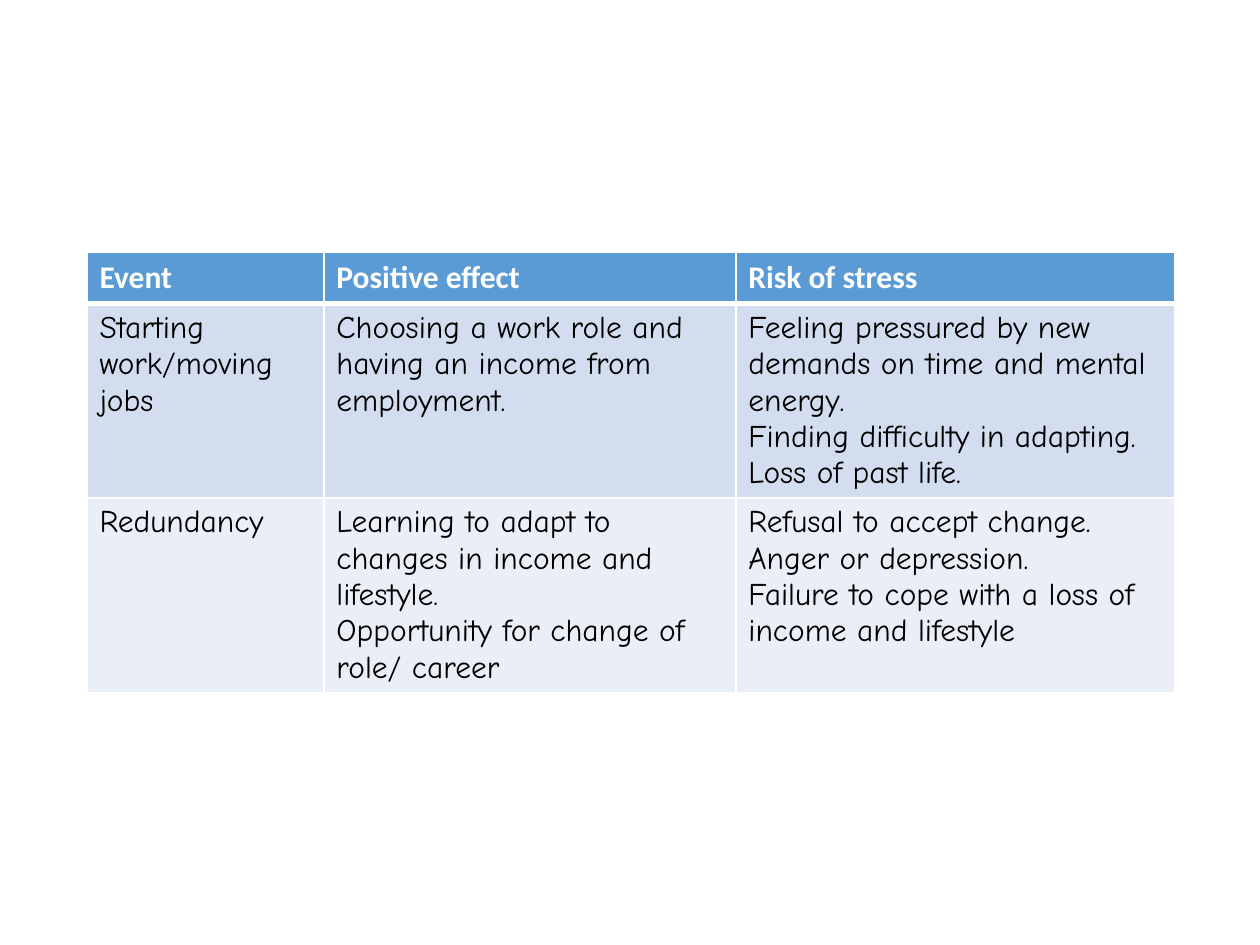
from lxml import etree
from pptx import Presentation
from pptx.dml.color import RGBColor
from pptx.oxml.ns import qn
from pptx.util import Inches, Pt

WHITE = RGBColor(0xFF, 0xFF, 0xFF)
BLACK = RGBColor(0x00, 0x00, 0x00)
HEADER_BLUE = RGBColor(0x5B, 0x9B, 0xD5)
BAND_FILLS = [RGBColor(0xD2, 0xDE, 0xEF), RGBColor(0xEA, 0xEF, 0xF7)]

HEADER_FONT = "Calibri"
BODY_FONT = "Comic Neue"
TEXT_SIZE = Pt(18)
THIN_RULE = Pt(1)
HEADER_RULE = Pt(3)

COLUMN_WIDTHS = [1.88, 3.27, 3.48]
ROW_HEIGHT = 0.41

HEADINGS = ["Event", "Positive effect", "Risk of stress"]
LIFE_EVENTS = [
    [
        ["Starting work/moving jobs"],
        ["Choosing a work role and having an income from employment."],
        [
            "Feeling pressured by new demands on time and mental energy.",
            "Finding difficulty in adapting.",
            "Loss of past life.",
        ],
    ],
    [
        ["Redundancy"],
        [
            "Learning to adapt to changes in income and lifestyle.",
            "Opportunity for change of role/ career",
        ],
        [
            "Refusal to accept change.  Anger or depression.",
            "Failure to cope with a loss of income and lifestyle",
        ],
    ],
]


def set_borders(cell, top, bottom):
    properties = cell._tc.get_or_add_tcPr()
    widths = {"lnL": THIN_RULE, "lnR": THIN_RULE, "lnT": top, "lnB": bottom}
    for side, width in widths.items():
        border = etree.SubElement(properties, qn(f"a:{side}"), w=str(width))
        fill = etree.SubElement(border, qn("a:solidFill"))
        etree.SubElement(fill, qn("a:srgbClr"), val=str(WHITE))


def set_fill(cell, color):
    cell.fill.solid()
    cell.fill.fore_color.rgb = color


def write_cell(cell, lines, font_name, color, bold):
    frame = cell.text_frame
    for index, line in enumerate(lines):
        paragraph = frame.add_paragraph() if index else frame.paragraphs[0]
        run = paragraph.add_run()
        run.text = line
        run.font.name = font_name
        run.font.size = TEXT_SIZE
        run.font.bold = bold
        run.font.color.rgb = color


def fill_header(table):
    for column, heading in enumerate(HEADINGS):
        cell = table.cell(0, column)
        set_borders(cell, THIN_RULE, HEADER_RULE)
        set_fill(cell, HEADER_BLUE)
        write_cell(cell, [heading], HEADER_FONT, WHITE, True)


def fill_events(table):
    for row, (event, band) in enumerate(zip(LIFE_EVENTS, BAND_FILLS), start=1):
        top = HEADER_RULE if row == 1 else THIN_RULE
        for column, lines in enumerate(event):
            cell = table.cell(row, column)
            set_borders(cell, top, THIN_RULE)
            set_fill(cell, band)
            write_cell(cell, lines, BODY_FONT, BLACK, False)


def add_event_table(slide):
    row_count = len(LIFE_EVENTS) + 1
    table = slide.shapes.add_table(
        row_count, len(HEADINGS),
        Inches(0.69), Inches(2),
        Inches(sum(COLUMN_WIDTHS)), Inches(ROW_HEIGHT * row_count),
    ).table
    for column, width in zip(table.columns, COLUMN_WIDTHS):
        column.width = Inches(width)
    for row in table.rows:
        row.height = Inches(ROW_HEIGHT)
    fill_header(table)
    fill_events(table)


def main():
    presentation = Presentation()
    presentation.slide_width = Inches(10)
    presentation.slide_height = Inches(7.5)
    slide = presentation.slides.add_slide(presentation.slide_layouts[6])
    add_event_table(slide)
    presentation.save("out.pptx")


if __name__ == "__main__":
    main()
